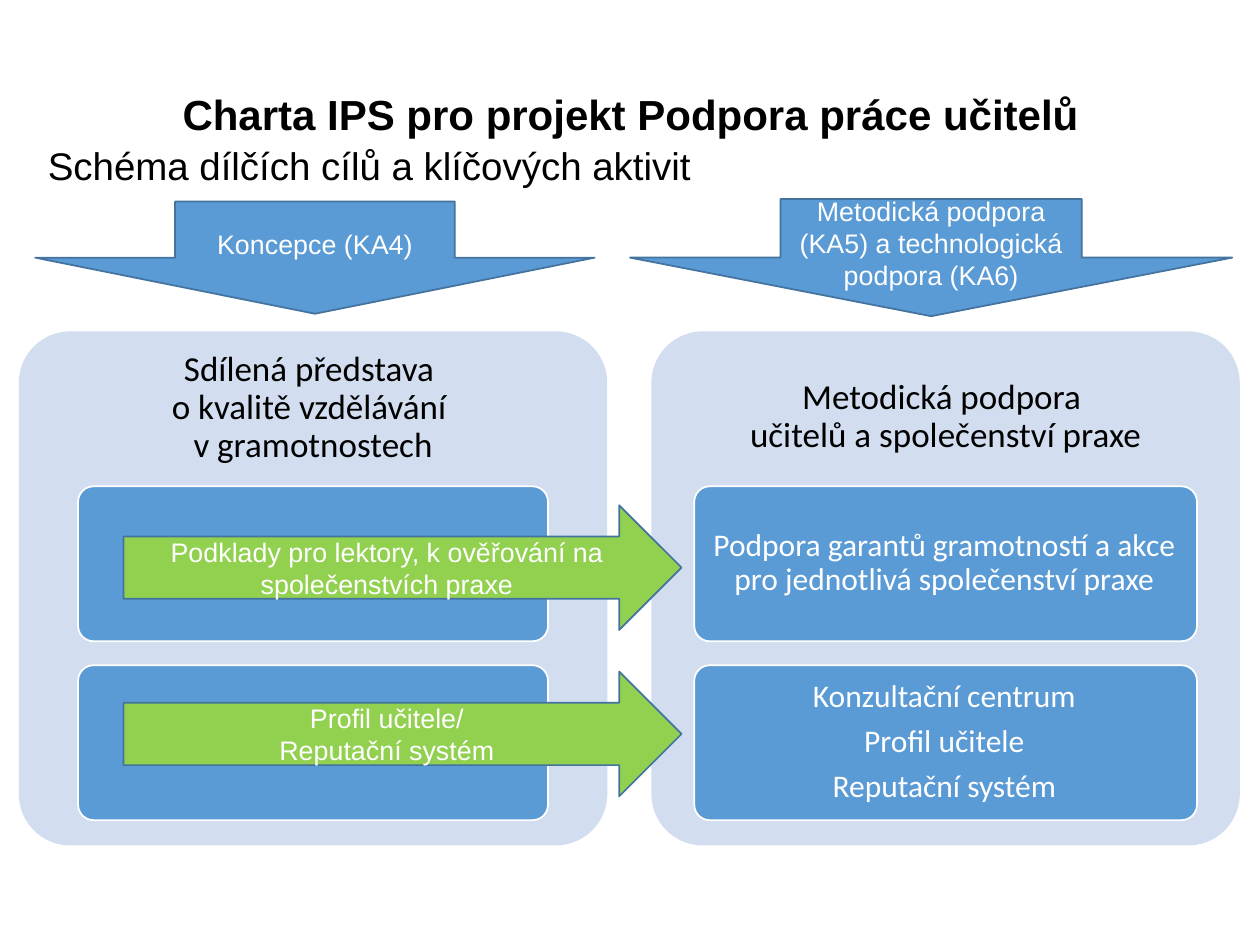
from pptx import Presentation, util as u
from pptx.dml.color import RGBColor
from pptx.enum import shapes, text
from pptx.oxml.ns import qn

KIND = shapes.MSO_SHAPE
MID, TOP = text.MSO_ANCHOR.MIDDLE, text.MSO_ANCHOR.TOP
MIDDLE, LEFT = text.PP_ALIGN.CENTER, text.PP_ALIGN.LEFT


class Deck:
    hues = {"black": "000000", "white": "FFFFFF", "pale": "D2DEEF",
            "blue": "5B9BD5", "edge": "43739E", "green": "92D050"}

    def __init__(self):
        self.prs = Presentation()
        self.prs.slide_width = u.Inches(10)
        self.prs.slide_height = u.Inches(7.5)
        self.slide = self.prs.slides.add_slide(self.prs.slide_layouts[1])

    def hue(self, name):
        return RGBColor.from_string(self.hues[name])

    def place(self, shape, box):
        shape.left, shape.top, shape.width, shape.height = map(u.Inches, box)

    def fill_text(self, shape, paras, size, color="white", face="Arial", bold=False,
                  align=MIDDLE, anchor=MID, pad=(0.1, 0.05), space=1, after=0):
        frame = shape.text_frame
        frame.word_wrap = True
        frame.auto_size = text.MSO_AUTO_SIZE.NONE
        frame.vertical_anchor = anchor
        frame.margin_left = frame.margin_right = u.Inches(pad[0])
        frame.margin_top = frame.margin_bottom = u.Inches(pad[1])
        for i, words in enumerate(paras):
            para = frame.add_paragraph() if i else frame.paragraphs[0]
            para.alignment = align
            para.line_spacing = space
            para.space_before = u.Pt(0)
            para.space_after = u.Pt(after)
            for j, line in enumerate(words.split("\n")):
                if j:
                    para.add_line_break()
                run = para.add_run()
                run.text = line
                font = run.font
                font.name, font.size, font.bold = face, u.Pt(size), bold
                font.color.rgb = self.hue(color)

    def title(self, words, box):
        head = self.slide.shapes.title
        self.place(head, box)
        self.fill_text(head, [words], 24, "black", bold=True, anchor=TOP)

    def body(self, words, box):
        hold = self.slide.placeholders[1]
        self.place(hold, box)
        props = hold.text_frame.paragraphs[0]._p.get_or_add_pPr()
        props.set("marL", "0")
        props.set("indent", "0")
        props.append(props.makeelement(qn("a:buNone"), {}))
        self.fill_text(hold, [words], 22, "black", align=LEFT, anchor=TOP, space=0.9)

    def shape(self, kind, box, fill, line=None):
        item = self.slide.shapes.add_shape(kind, *map(u.Inches, box))
        item.shadow.inherit = False
        item.fill.solid()
        item.fill.fore_color.rgb = self.hue(fill)
        if line:
            item.line.color.rgb = self.hue(line)
            item.line.width = u.Pt(1)
        else:
            item.line.fill.background()
        return item

    def card(self, box, fill, line=None):
        item = self.shape(KIND.ROUNDED_RECTANGLE, box, fill, line)
        item.adjustments[0] = 0.1

    def label(self, paras, box, size, color, pad):
        item = self.slide.shapes.add_textbox(*map(u.Inches, box))
        self.fill_text(item, paras, size, color, "Calibri", pad=pad,
                       space=0.9, after=size * 0.35)

    def arrow(self, kind, words, box, fill):
        self.fill_text(self.shape(kind, box, fill, "edge"), [words], 15.3)


def main():
    deck = Deck()
    deck.title("Charta IPS pro projekt Podpora práce učitelů", (0.61, 0.65, 8.79, 0.5))
    deck.body("Schéma dílčích cílů a klíčových aktivit", (0.28, 1.12, 6.39, 0.52))

    rows = (3.86, 5.28)
    panels = (
        (0.15, 2.63, "Sdílená představa \no kvalitě vzdělávání \nv gramotnostech",
         0.62, 3.73, ((), ())),
        (5.17, 2.7, "Metodická podpora \nučitelů a společenství praxe",
         5.51, 3.99,
         (("Podpora garantů gramotností a akce pro jednotlivá společenství praxe",),
          ("Konzultační centrum", "Profil učitele", "Reputační systém"))),
    )
    for left, top, head, inner, width, cells in panels:
        deck.card((left, 2.63, 4.67, 4.08), "pale")
        deck.label([head], (left, top, 4.67, 1.22), 20, "black", (0.08, 0.08))
        for row, paras in zip(rows, cells):
            deck.card((inner, row, width, 1.23), "blue", "white")
            if paras:
                deck.label(paras, (inner + 0.03, row + 0.03, width - 0.08, 1.16),
                           18, "white", (0.05, 0.04))

    deck.arrow(KIND.DOWN_ARROW, "Koncepce (KA4)", (0.28, 1.6, 4.44, 0.89), "blue")
    deck.arrow(KIND.DOWN_ARROW, "Metodická podpora (KA5) a technologická podpora (KA6)",
               (5, 1.58, 4.78, 0.93), "blue")
    links = ((4.01, "Podklady pro lektory, k ověřování na společenstvích praxe"),
             (5.33, "Profil učitele/\nReputační systém"))
    for top, words in links:
        deck.arrow(KIND.RIGHT_ARROW, words, (0.98, top, 4.43, 0.99), "green")

    deck.prs.save("out.pptx")


if __name__ == "__main__":
    main()
